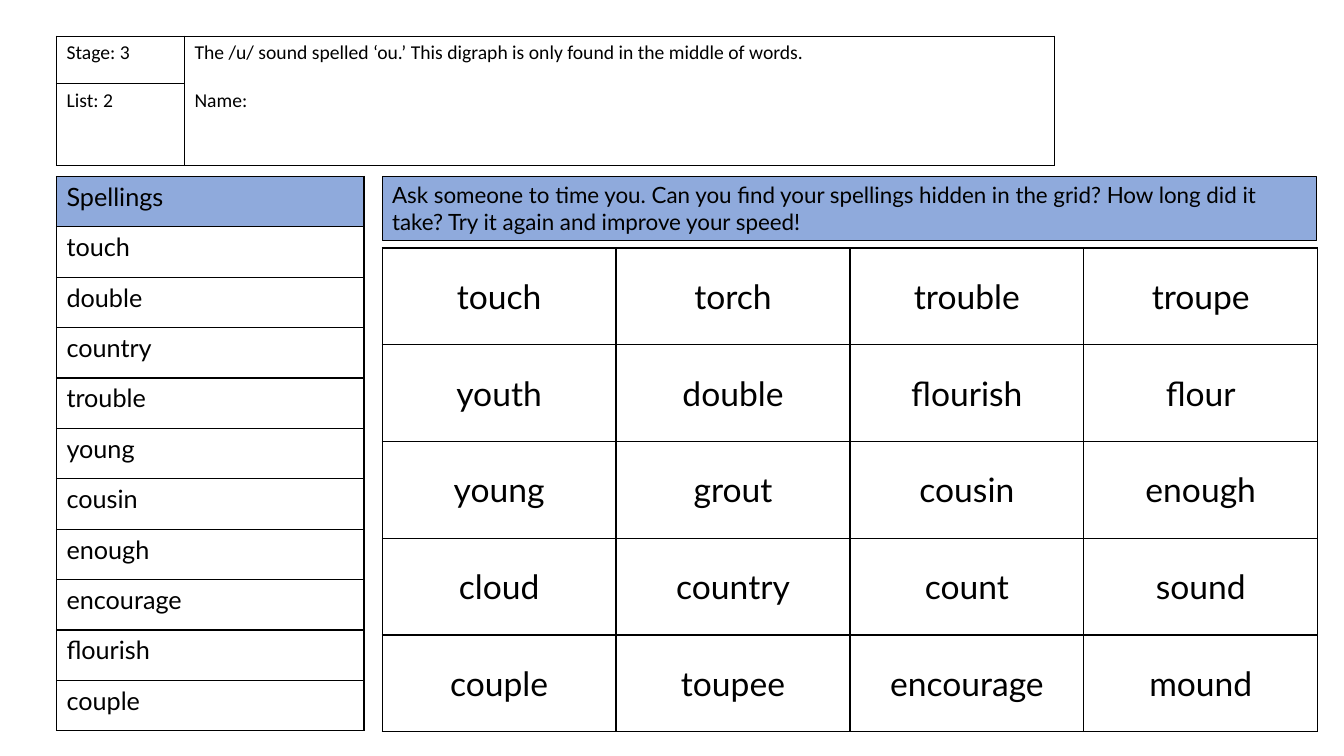
import pptx
import pptx.util
import pptx.dml.color
import pptx.enum.shapes
import pptx.enum.text
import pptx.oxml
import pptx.oxml.ns

Inches = pptx.util.Inches
Pt = pptx.util.Pt
ALIGN = pptx.enum.text.PP_ALIGN
ANCHOR = pptx.enum.text.MSO_ANCHOR

COLORS = {"ink": "000000", "blue": "8FAADC"}
WORDS = ["touch", "double", "country", "trouble", "young",
         "cousin", "enough", "encourage", "flourish", "couple"]
GRID = [
    ["touch", "torch", "trouble", "troupe"],
    ["youth", "double", "flourish", "flour"],
    ["young", "grout", "cousin", "enough"],
    ["cloud", "country", "count", "sound"],
    ["couple", "toupee", "encourage", "mound"],
]


def color(name):
    return pptx.dml.color.RGBColor.from_string(COLORS[name])


def write(para, text, size, font, align=ALIGN.LEFT):
    para.alignment = align
    run = para.add_run()
    run.text = text
    run.font.size = Pt(size)
    run.font.name = font
    run.font.color.rgb = color("ink")


def border(cell):
    props = cell._tc.get_or_add_tcPr()
    for side in ("lnL", "lnR", "lnT", "lnB"):
        props.append(pptx.oxml.parse_xml(
            f'<a:{side} {pptx.oxml.ns.nsdecls("a")} w="{Pt(1)}"><a:solidFill>'
            f'<a:srgbClr val="{COLORS["ink"]}"/></a:solidFill></a:{side}>'))


def add_table(slide, left, top, widths, heights):
    """Add an unfilled table with a thin black line round each cell."""
    frame = slide.shapes.add_table(
        len(heights), len(widths), Inches(left), Inches(top),
        Inches(sum(widths)), Inches(sum(heights)))
    table = frame.table
    table.first_row = table.horz_banding = False
    for col, width in zip(table.columns, widths):
        col.width = Inches(width)
    for row, height in zip(table.rows, heights):
        row.height = Inches(height)
    for cell in table.iter_cells():
        border(cell)
        cell.fill.background()
    return table


def fill_cells(table, rows, size, font, align=ALIGN.LEFT, anchor=ANCHOR.TOP):
    for r, row in enumerate(rows):
        for c, text in enumerate(row):
            cell = table.cell(r, c)
            cell.vertical_anchor = anchor
            write(cell.text_frame.paragraphs[0], text, size, font, align)


def add_banner(slide, left, top, width, height, text):
    box = slide.shapes.add_shape(
        pptx.enum.shapes.MSO_SHAPE.RECTANGLE,
        Inches(left), Inches(top), Inches(width), Inches(height))
    box.shadow.inherit = False
    box.fill.solid()
    box.fill.fore_color.rgb = color("blue")
    box.line.color.rgb = color("ink")
    box.line.width = Pt(0.75)
    frame = box.text_frame
    frame.word_wrap = True
    frame.vertical_anchor = ANCHOR.TOP
    write(frame.paragraphs[0], text, 16, "Lato")


def main():
    deck = pptx.Presentation()
    deck.slide_width, deck.slide_height = Inches(13.33), Inches(7.5)
    slide = deck.slides.add_slide(deck.slide_layouts[6])

    # Spelling list
    words = add_table(slide, 0.56, 1.75, [3.05], [0.5] * 11)
    fill_cells(words, [[word] for word in ["Spellings"] + WORDS], 18, "Lato")
    head = words.cell(0, 0)
    head.fill.solid()
    head.fill.fore_color.rgb = color("blue")

    # Stage, list and name
    info = add_table(slide, 0.56, 0.36, [1.27, 8.63], [0.47, 0.47])
    info.cell(0, 1).merge(info.cell(1, 1))
    rule = ("The /u/ sound spelled ‘ou.’ This digraph is only found "
            "in the middle of words.")
    fill_cells(info, [["Stage: 3", rule], ["List: 2"]], 14, "Calibri")
    name = info.cell(0, 1).text_frame.add_paragraph()
    name.space_before = Pt(17)
    write(name, "Name:", 14, "Calibri")

    # Word grid
    grid = add_table(slide, 3.79, 2.46, [2.32] * 4, [0.96] * 5)
    fill_cells(grid, GRID, 24, "Lato", ALIGN.CENTER, ANCHOR.MIDDLE)

    # Task
    add_banner(slide, 3.79, 1.75, 9.27, 0.64,
               "Ask someone to time you. Can you find your spellings hidden "
               "in the grid? How long did it take? Try it again and improve "
               "your speed!")

    deck.save("out.pptx")


if __name__ == "__main__":
    main()
